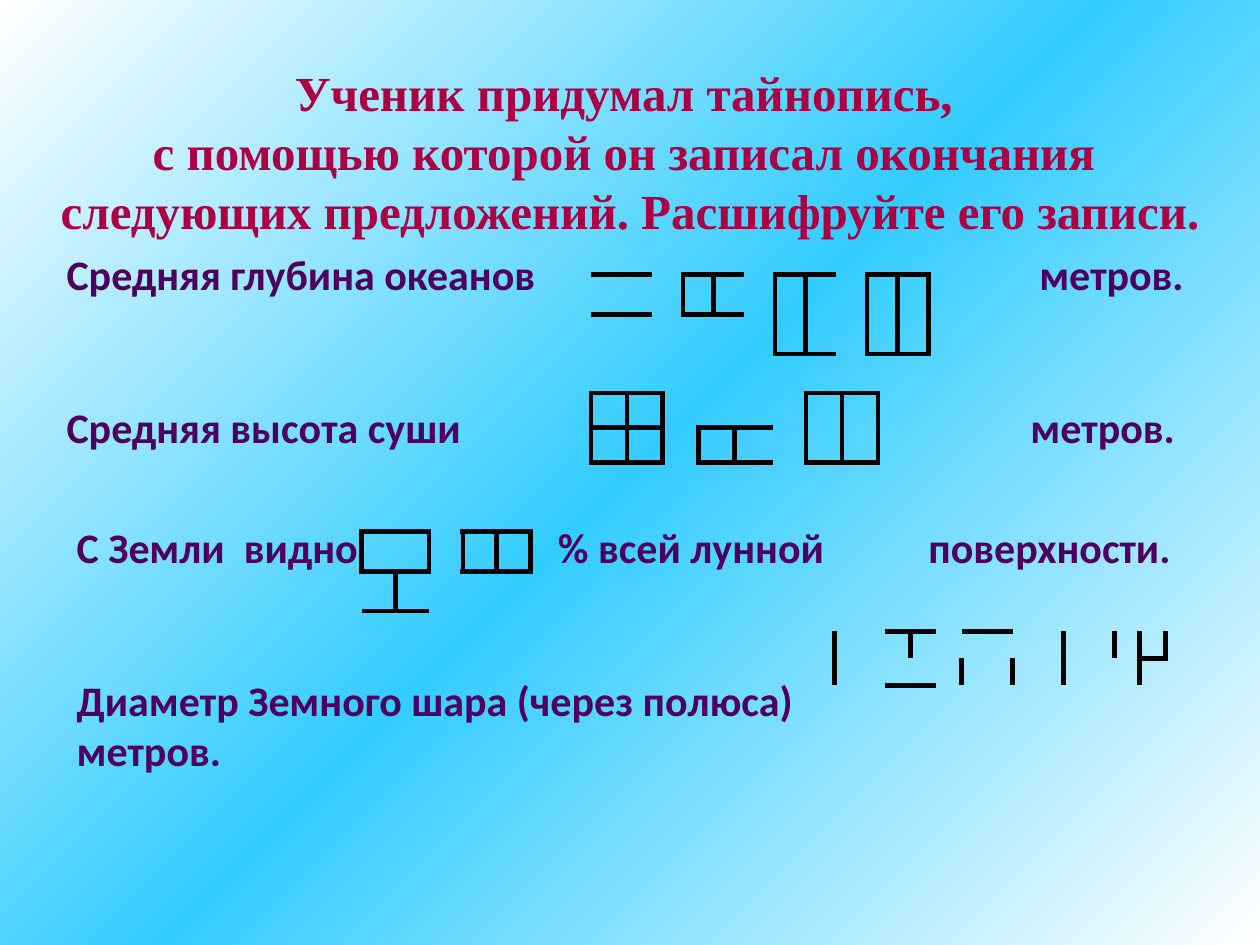
from copy import deepcopy
from dataclasses import dataclass

from lxml import etree
from pptx import Presentation
from pptx.dml.color import RGBColor
from pptx.enum.text import MSO_ANCHOR, PP_ALIGN
from pptx.oxml.ns import qn
from pptx.util import Inches, Pt

LEFT, CENTER = PP_ALIGN.LEFT, PP_ALIGN.CENTER
TOP, MIDDLE = MSO_ANCHOR.TOP, MSO_ANCHOR.MIDDLE
PLAIN_GRID = "{2D5ABB26-0587-4C30-8999-92F81FD0307C}"
SIDES = {"l": "a:lnL", "r": "a:lnR", "t": "a:lnT", "b": "a:lnB"}


@dataclass(frozen=True)
class Theme:
    title: str = "AB0043"
    body: str = "4E005F"
    line: str = "000000"
    back: tuple = ("FFFFFF", "33CCFF", "FFFFFF")
    title_font: str = "Times New Roman"
    body_font: str = "Calibri"
    title_size: int = 28
    body_size: int = 24
    cell_size: int = 6
    line_width: int = 3
    gap: float = 58.6  # two empty body lines, in points


def write(frame, text, font, size, color, align=LEFT, tabs=(), gaps=()):
    """Fill a frame line by line; tabs and gaps belong to each line."""
    for i, line in enumerate(text.split("\n")):
        para = frame.paragraphs[0] if i == 0 else frame.add_paragraph()
        para.alignment = align
        if i < len(gaps):
            para.space_before = Pt(gaps[i])
        if i < len(tabs):
            stops = etree.SubElement(para._p.get_or_add_pPr(), qn("a:tabLst"))
            for pos in tabs[i]:
                etree.SubElement(stops, qn("a:tab"), pos=str(Inches(pos)), algn="l")
        run = para.add_run()
        run.text = line
        run.font.name, run.font.size, run.font.bold = font, Pt(size), True
        run.font.color.rgb = RGBColor.from_string(color)


class Board:
    def __init__(self, theme, slide):
        self.theme, self.slide = theme, slide

    def back(self):
        fill = self.slide.background.fill
        fill.gradient()
        fill.gradient_angle = 315
        stops = next(self.slide._element.iter(qn("a:gsLst")))
        stops.insert(1, deepcopy(stops[0]))
        for i, (stop, color) in enumerate(zip(fill.gradient_stops, self.theme.back)):
            stop.position = i / 2
            stop.color.rgb = RGBColor.from_string(color)

    def text(self, box, text, anchor=TOP, **style):
        frame = self.slide.shapes.add_textbox(*map(Inches, box)).text_frame
        frame.word_wrap = True
        frame.vertical_anchor = anchor
        write(frame, text, **style)

    def body(self, box, text, **style):
        theme = self.theme
        self.text(box, text, font=theme.body_font, size=theme.body_size,
                  color=theme.body, **style)

    def cipher(self, box, *lines, spans=()):
        """Draw signs as a table; each word names the ruled sides of a cell.

        A span is (row, column, rows, columns).
        """
        cells = [line.split() for line in lines]
        table = self.slide.shapes.add_table(
            len(cells), len(cells[0]), *map(Inches, box)).table
        table.first_row = table.horz_banding = False
        table._tbl.tblPr.find(qn("a:tableStyleId")).text = PLAIN_GRID
        for r, words in enumerate(cells):
            for c, word in enumerate(words):
                self.cell(table.cell(r, c), word)
        for r, c, high, wide in spans:
            table.cell(r, c).merge(table.cell(r + high - 1, c + wide - 1))

    def cell(self, cell, word):
        cell.margin_left = cell.margin_right = 0
        cell.margin_top = cell.margin_bottom = 0
        cell.fill.background()
        para = cell.text_frame.paragraphs[0]._p
        etree.SubElement(para, qn("a:endParaRPr"), sz=str(self.theme.cell_size * 100))
        props = cell._tc.get_or_add_tcPr()
        for i, (side, tag) in enumerate(SIDES.items()):
            line = etree.Element(qn(tag), w=str(Pt(self.theme.line_width)))
            if side in word:
                fill = etree.SubElement(line, qn("a:solidFill"))
                etree.SubElement(fill, qn("a:srgbClr"), val=self.theme.line)
            else:
                etree.SubElement(line, qn("a:noFill"))
            props.insert(i, line)


def main():
    theme = Theme()
    deck = Presentation()
    deck.slide_width, deck.slide_height = Inches(10), Inches(7.5)
    board = Board(theme, deck.slides.add_slide(deck.slide_layouts[6]))
    board.back()

    # Title
    board.text((0, 0.44, 10, 1.51),
               "Ученик придумал тайнопись, \n"
               "с помощью которой он записал окончания \n"
               "следующих предложений. Расшифруйте его записи.",
               anchor=MIDDLE, align=CENTER, font=theme.title_font,
               size=theme.title_size, color=theme.title)

    # Ocean depth and land height
    board.body((0.43, 1.92, 9.37, 2.52),
               "Средняя глубина океанов\tметров.\n"
               "Средняя высота суши\tметров.",
               tabs=[[7.72], [7.65]], gaps=[0, theme.gap])
    board.cipher((4.69, 2.18, 2.68, 0.63),
                 "tb tb . ltrb ltrb . ltr ltr . ltr ltr",
                 "t  t  . t    t    . lrb lrb . lrb lrb")
    board.cipher((4.69, 3.12, 2.28, 0.55),
                 "ltrb ltrb l b    b    r ltrb ltrb",
                 "ltrb ltrb l ltrb ltrb r ltrb ltrb",
                 spans=[(0, c, 2, 1) for c in (2, 5, 6, 7)])

    # Moon surface and Earth diameter
    board.body((0.51, 4.09, 9.21, 2.42),
               "С Земли  видно\t% всей лунной\tповерхности.\n"
               "Диаметр Земного шара (через полюса)\n"
               "метров.",
               tabs=[[3.82, 6.76]], gaps=[0, theme.gap])
    board.cipher((2.87, 4.22, 1.34, 0.63),
                 "ltrb ltrb lr ltrb ltrb",
                 "trb  ltb  .  t    t",
                 spans=[(0, 0, 1, 2)])
    board.cipher((6.42, 5.01, 2.83, 0.43),
                 "r l . tr lt . t t .  . l  . lrb lrb",
                 "r l . b  b  . l r lr r lr . r   lt",
                 spans=[(0, 2, 2, 1), (0, 5, 2, 1), (1, 8, 1, 2), (1, 10, 1, 3)])

    deck.save("out.pptx")


if __name__ == "__main__":
    main()
